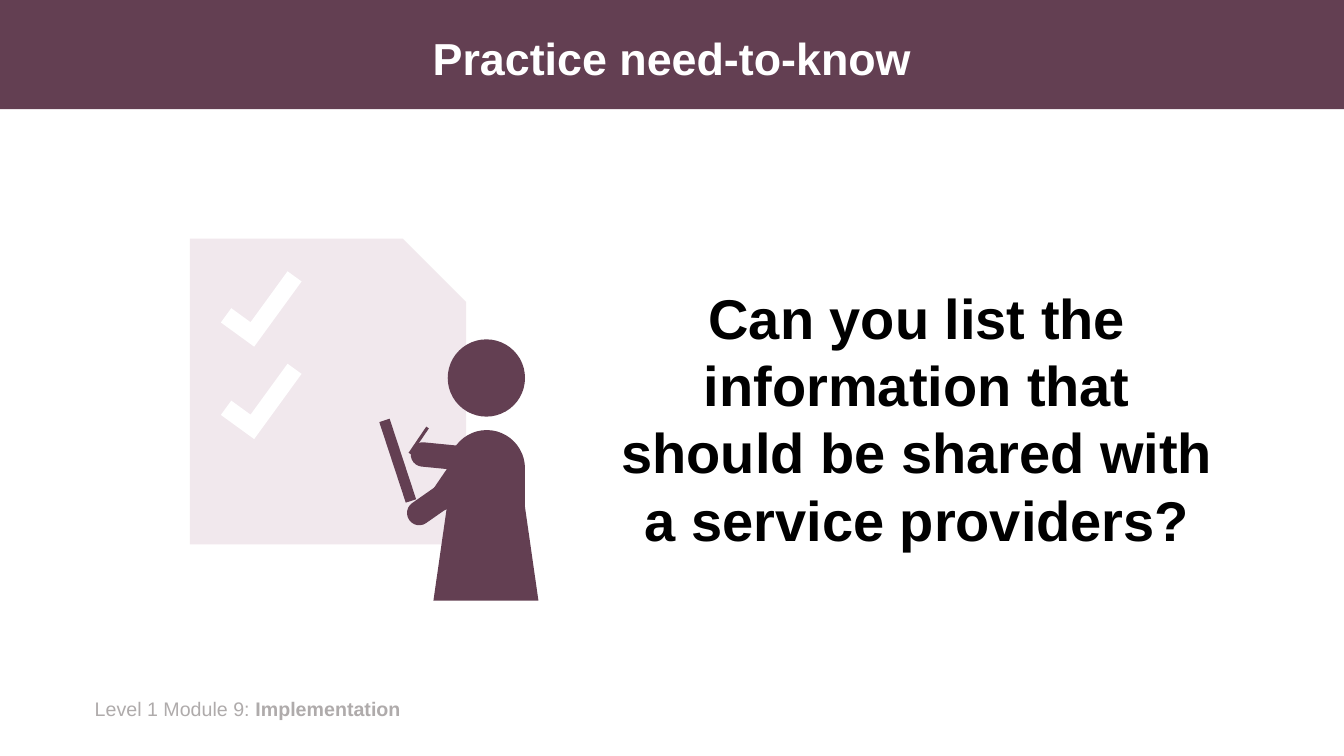
from lxml.etree import SubElement
from pptx import Presentation
from pptx.dml.color import RGBColor
from pptx.enum.shapes import MSO_CONNECTOR, MSO_SHAPE
from pptx.enum.text import MSO_ANCHOR, PP_ALIGN
from pptx.oxml.ns import qn
from pptx.util import Inches, Pt

COLORS = {
    "plum": "633F52",
    "blush": "F1E8ED",
    "white": "FFFFFF",
    "black": "000000",
    "gray": "AFABAB",
}
WIDE, HIGH = Inches(13.33), Inches(7.5)
COLS, ROWS = 16, 9


def color(name):
    return RGBColor.from_string(COLORS[name])


def col(n):
    return round(WIDE * n / COLS)


def row(n):
    return round(HIGH * n / ROWS)


def place(x, y, w, h):
    return col(x), row(y), col(w), row(h)


def add_part(slide, kind, box, fill, turn=0, adjust=()):
    part = slide.shapes.add_shape(kind, *place(*box))
    part.shadow.inherit = False
    part.fill.solid()
    part.fill.fore_color.rgb = color(fill)
    part.line.fill.background()
    part.rotation = turn
    for i, value in enumerate(adjust):
        part.adjustments[i] = value


def add_text(slide, box, runs, size, ink, align=PP_ALIGN.CENTER,
             anchor=MSO_ANCHOR.MIDDLE, bold=True, space=None):
    frame = slide.shapes.add_textbox(*place(*box)).text_frame
    frame.word_wrap = True
    frame.vertical_anchor = anchor
    line = frame.paragraphs[0]
    line.alignment = align
    line.line_spacing = space
    line.font.name = "Arial"
    line.font.size = Pt(size)
    line.font.bold = bold
    line.font.color.rgb = color(ink)
    for words in runs:
        line.add_run().text = words
    return line


def add_line(slide, start, end, ink, width):
    line = slide.shapes.add_connector(
        MSO_CONNECTOR.STRAIGHT, col(start[0]), row(start[1]),
        col(end[0]), row(end[1]))
    line.line.color.rgb = color(ink)
    line.line.width = Pt(width)
    SubElement(line._element.spPr, qn("a:effectLst"))


def add_sheet(slide):
    add_part(slide, MSO_SHAPE.SNIP_1_RECTANGLE, (2.26, 2.84, 3.29, 3.64),
             "blush", adjust=[0.23])
    # Check marks, one below the other
    for i in range(2):
        add_part(slide, MSO_SHAPE.CORNER, (2.63, 3.35 + 1.1 * i, 0.96, 0.49),
                 "white", 306, [0.42, 0.43])


def add_person(slide):
    sleeve = MSO_SHAPE.ROUND_2_SAME_RECTANGLE
    # Arms, each a rounded bar with its own turn
    for x, y, long, turn in [(5.23, 5.41, 0.7, 214.3),
                             (4.92, 5.82, 0.47, 235),
                             (5.14, 5.04, 0.79, 275.6)]:
        add_part(slide, sleeve, (x, y, 0.29, long), "plum", turn, [0.49, 0])
    # Clipboard and pen
    add_part(slide, MSO_SHAPE.RECTANGLE, (4.67, 4.98, 0.13, 1.01),
             "plum", 341.8)
    add_line(slide, (5.09, 5.09), (4.88, 5.4), "plum", 2.25)
    # Skirt, body and head
    add_part(slide, MSO_SHAPE.FLOWCHART_MANUAL_OPERATION,
             (5.16, 5.41, 1.25, 1.74), "plum", 180)
    add_part(slide, sleeve, (5.34, 5.12, 0.91, 2), "plum", adjust=[0.5, 0])
    add_part(slide, MSO_SHAPE.OVAL, (5.33, 4.04, 0.92, 0.92), "plum")


def main():
    deck = Presentation()
    deck.slide_width, deck.slide_height = WIDE, HIGH
    slide = deck.slides.add_slide(deck.slide_layouts[6])

    # Title band
    add_part(slide, MSO_SHAPE.RECTANGLE, (0, 0, COLS, 1.3), "plum")
    add_text(slide, (1.1, 0.16, 13.8, 1.14), ["Practice need-to-know"],
             32, "white", space=0.9)

    # Footer
    foot = add_text(slide, (1.01, 8.24, 5.46, 0.41),
                    ["Level 1 Module 9: ", "Implementation"], 14, "gray",
                    PP_ALIGN.LEFT, MSO_ANCHOR.TOP, bold=False)
    foot.runs[1].font.bold = True

    # Question
    add_text(slide, (7.14, 1.98, 7.55, 5.99),
             ["Can you list the information that should be shared with "
              "a service providers?"], 40, "black")

    # Drawing
    add_sheet(slide)
    add_person(slide)
    deck.save("out.pptx")


if __name__ == "__main__":
    main()
